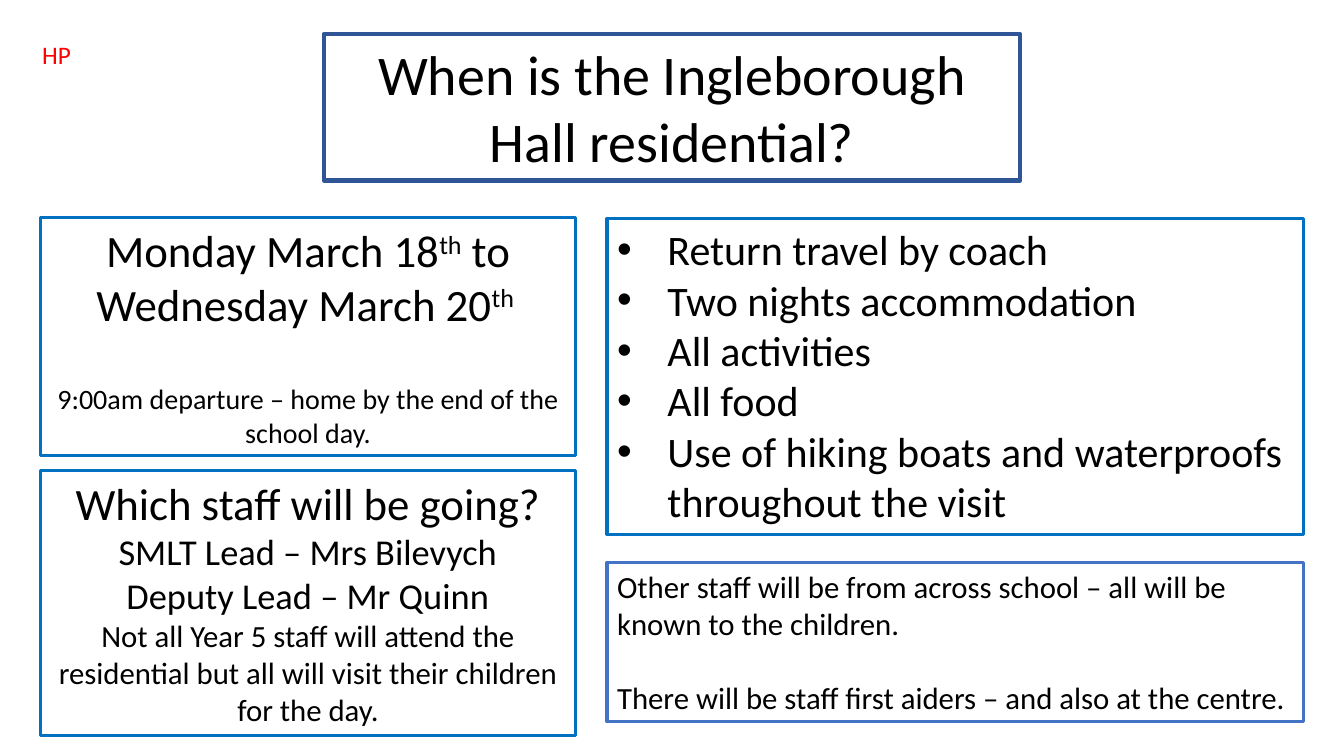
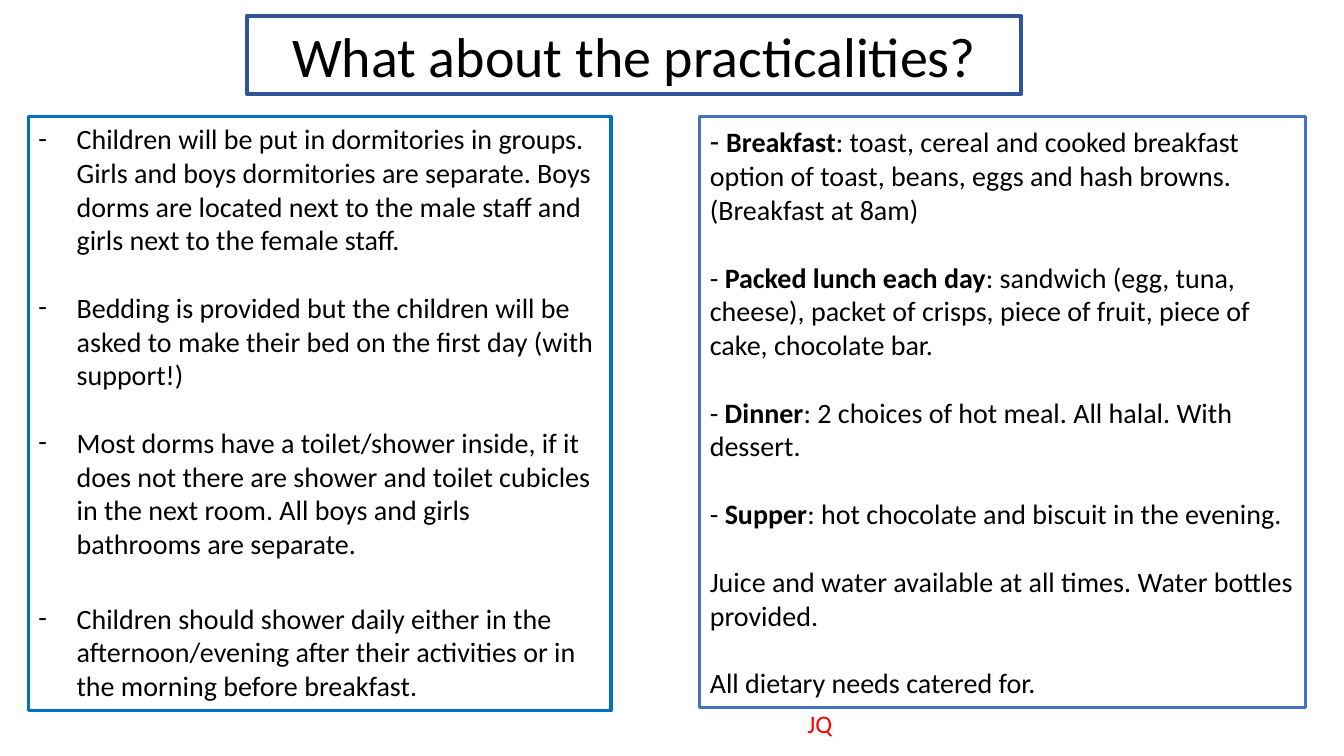
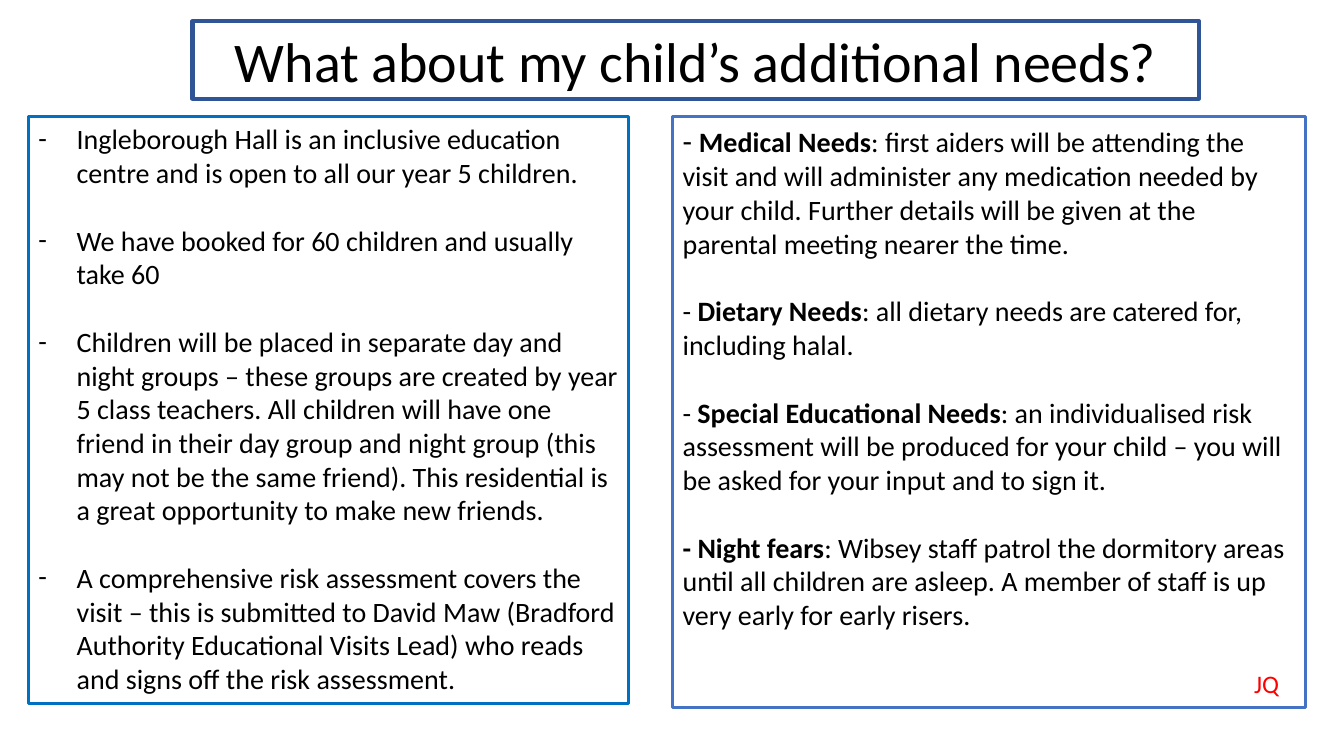
from dataclasses import dataclass

from lxml import etree
from pptx import Presentation
from pptx.dml.color import RGBColor
from pptx.enum.text import MSO_ANCHOR, MSO_AUTO_SIZE, PP_ALIGN
from pptx.oxml.ns import qn
from pptx.util import Inches, Pt

LEFT, CENTER = PP_ALIGN.LEFT, PP_ALIGN.CENTER
TOP = MSO_ANCHOR.TOP
NO_FIT = MSO_AUTO_SIZE.NONE
COMPARISON, TWO_CONTENT = 4, 3  # layout numbers in the default template


@dataclass(frozen=True)
class Theme:
    font: str = "Calibri"
    white: RGBColor = RGBColor(0xFF, 0xFF, 0xFF)
    black: RGBColor = RGBColor(0, 0, 0)
    red: RGBColor = RGBColor(0xFF, 0, 0)
    navy: RGBColor = RGBColor(0x2F, 0x55, 0x97)
    blue: RGBColor = RGBColor(0, 0x70, 0xC0)
    periwinkle: RGBColor = RGBColor(0x44, 0x72, 0xC4)
    title: int = 40
    heading: int = 32
    items: int = 30
    names: int = 26
    note: int = 22
    body: int = 20
    speaker: int = 18
    title_border: float = 3
    border: float = 2.25
    line_height: float = 1.22


THEME = Theme()
BULLETS = {"•": (0.5, "Arial"), "-": (0.38, THEME.font)}  # indent, font


@dataclass
class Para:
    """Text is a string or a list of (words, style); gap is in points of type size."""
    text: str | list
    size: int = THEME.body
    gap: int = 0


@dataclass
class Box:
    area: tuple
    color: RGBColor
    paras: list
    bullet: str = ""
    align: PP_ALIGN = LEFT
    border: float = THEME.border


def spaced(*texts):
    """Body paragraphs set one blank line apart."""
    return [Para(text, gap=THEME.body if i else 0) for i, text in enumerate(texts)]


def fill_box(shape, box):
    shape.left, shape.top, shape.width, shape.height = map(Inches, box.area)
    shape.fill.solid()
    shape.fill.fore_color.rgb = THEME.white
    shape.line.color.rgb = box.color
    shape.line.width = Pt(box.border)
    frame = shape.text_frame
    frame.word_wrap = True
    frame.auto_size = NO_FIT
    frame.vertical_anchor = TOP
    for i, item in enumerate(box.paras):
        para = frame.add_paragraph() if i else frame.paragraphs[0]
        props = para._p.get_or_add_pPr()
        indent, bullet_font = BULLETS.get(box.bullet, (0, ""))
        props.set("marL", str(Inches(indent)))
        props.set("indent", str(-Inches(indent)))
        if box.bullet:
            etree.SubElement(props, qn("a:buFont"), typeface=bullet_font)
            etree.SubElement(props, qn("a:buChar"), char=box.bullet)
        else:
            etree.SubElement(props, qn("a:buNone"))
        para.alignment = box.align
        para.space_before = Pt(item.gap * THEME.line_height)
        para.font.name = THEME.font
        para.font.size = Pt(item.size)
        para.font.bold = False
        para.font.color.rgb = THEME.black
        spans = [(item.text, "")] if isinstance(item.text, str) else item.text
        for words, style in spans:
            span = para.add_run()
            span.text = words
            if style == "bold":
                span.font.bold = True
            elif style == "large":
                span.font.size = Pt(THEME.note)
            elif style == "raised":
                span._r.get_or_add_rPr().set("baseline", "30000")


dates = Box((0.4, 2.16, 5.31, 2.36), THEME.blue, [
    Para([("Monday March 18", ""), ("th", "raised"),
          (" to Wednesday March 20", ""), ("th ", "raised")], THEME.heading),
    Para("9:00am departure – home by the end of the school day.", gap=THEME.items),
], align=CENTER)

included = Box((6.02, 2.17, 6.91, 3.13), THEME.blue, [
    Para(text, THEME.items) for text in (
        "Return travel by coach",
        "Two nights accommodation",
        "All activities",
        "All food",
        "Use of hiking boats and waterproofs throughout the visit",
    )], bullet="•")

staff = Box((0.4, 4.67, 5.31, 2.63), THEME.blue, [
    Para("Which staff will be going?", THEME.heading),
    Para("SMLT Lead – Mrs Bilevych", THEME.names),
    Para("Deputy Lead – Mr Quinn", THEME.names),
    Para("Not all Year 5 staff will attend the residential but all will visit "
         "their children for the day.", THEME.note),
], align=CENTER)

other_staff = Box((6.02, 5.58, 6.91, 1.58), THEME.periwinkle, [
    Para("Other staff will be from across school – all will be known to the children.",
         THEME.note),
    Para("There will be staff first aiders – and also at the centre.",
         THEME.note, THEME.note),
])

rooms = Box((0.28, 1.16, 5.78, 5.89), THEME.blue, spaced(
    "Children will be put in dormitories in groups. Girls and boys dormitories are "
    "separate. Boys dorms are located next to the male staff and girls next to the "
    "female staff.",
    "Bedding is provided but the children will be asked to make their bed on the "
    "first day (with support!)",
    "Most dorms have a toilet/shower inside, if it does not there are shower and "
    "toilet cubicles in the next room. All boys and girls bathrooms are separate.",
) + [
    Para("Children should shower daily either in the afternoon/evening after their "
         "activities or in the morning before breakfast.", gap=24),
], bullet="-")

meals = Box((6.94, 1.16, 6.01, 5.86), THEME.periwinkle, spaced(
    [("- ", "large"), ("Breakfast", "bold"),
     (": toast, cereal and cooked breakfast option of toast, beans, eggs and hash "
      "browns. (Breakfast at 8am)", "")],
    [("- ", ""), ("Packed lunch each day", "bold"),
     (": sandwich (egg, tuna, cheese), packet of crisps, piece of fruit, piece of "
      "cake, chocolate bar.", "")],
    [("-", ""), (" Dinner", "bold"),
     (": 2 choices of hot meal. All halal. With dessert.", "")],
    [("- ", ""), ("Supper", "bold"),
     (": hot chocolate and biscuit in the evening.", "")],
    "Juice and water available at all times. Water bottles provided.",
    "All dietary needs catered for.",
))

groups = Box((0.28, 1.16, 5.95, 5.82), THEME.blue, spaced(
    "Ingleborough Hall is an inclusive education centre and is open to all our year "
    "5 children.",
    "We have booked for 60 children and usually take 60",
    "Children will be placed in separate day and night groups – these groups are "
    "created by year 5 class teachers. All children will have one friend in their day "
    "group and night group (this may not be the same friend). This residential is a "
    "great opportunity to make new friends.",
    "A comprehensive risk assessment covers the visit – this is submitted to David "
    "Maw (Bradford Authority Educational Visits Lead) who reads and signs off the "
    "risk assessment.",
), bullet="-")

needs = Box((6.67, 1.16, 6.28, 5.86), THEME.periwinkle, spaced(
    [("- ", "large"), ("Medical Needs", "bold"),
     (": first aiders will be attending the visit and will administer any medication "
      "needed by your child. Further details will be given at the parental meeting "
      "nearer the time.", "")],
    [("- ", ""), ("Dietary Needs", "bold"),
     (": all dietary needs are catered for, including halal.", "")],
    [("-", ""), (" Special Educational Needs", "bold"),
     (": an individualised risk assessment will be produced for your child – you will "
      "be asked for your input and to sign it.", "")],
    [("- Night fears", "bold"),
     (": Wibsey staff patrol the dormitory areas until all children are asleep. A "
      "member of staff is up very early for early risers.", "")],
))

# layout, title, title area, boxes, speaker initials, initials position
PAGES = [
    (COMPARISON, "When is the Ingleborough Hall residential?", (3.21, 0.34, 6.91, 1.45),
     [dates, included, staff, other_staff], "HP", (0.32, 0.34)),
    (TWO_CONTENT, "What about the practicalities?", (2.45, 0.16, 7.68, 0.77),
     [rooms, meals], "JQ", (7.91, 6.98)),
    (TWO_CONTENT, "What about my child’s additional needs?", (1.91, 0.21, 9.98, 0.77),
     [groups, needs], "JQ", (12.34, 6.58)),
]

deck = Presentation()
deck.slide_width, deck.slide_height = Inches(13.33), Inches(7.5)

for layout, title, title_area, boxes, initials, (left, top) in PAGES:
    page = deck.slides.add_slide(deck.slide_layouts[layout])
    heading = Box(title_area, THEME.navy, [Para(title, THEME.title)],
                  align=CENTER, border=THEME.title_border)
    for shape, box in zip(page.placeholders, [heading] + boxes):
        fill_box(shape, box)

    speaker = page.shapes.add_textbox(Inches(left), Inches(top), Inches(0.72), Inches(0.4))
    speaker.text_frame.word_wrap = True
    para = speaker.text_frame.paragraphs[0]
    para.text = initials
    para.font.name = THEME.font
    para.font.size = Pt(THEME.speaker)
    para.font.color.rgb = THEME.red

deck.save("out.pptx")
